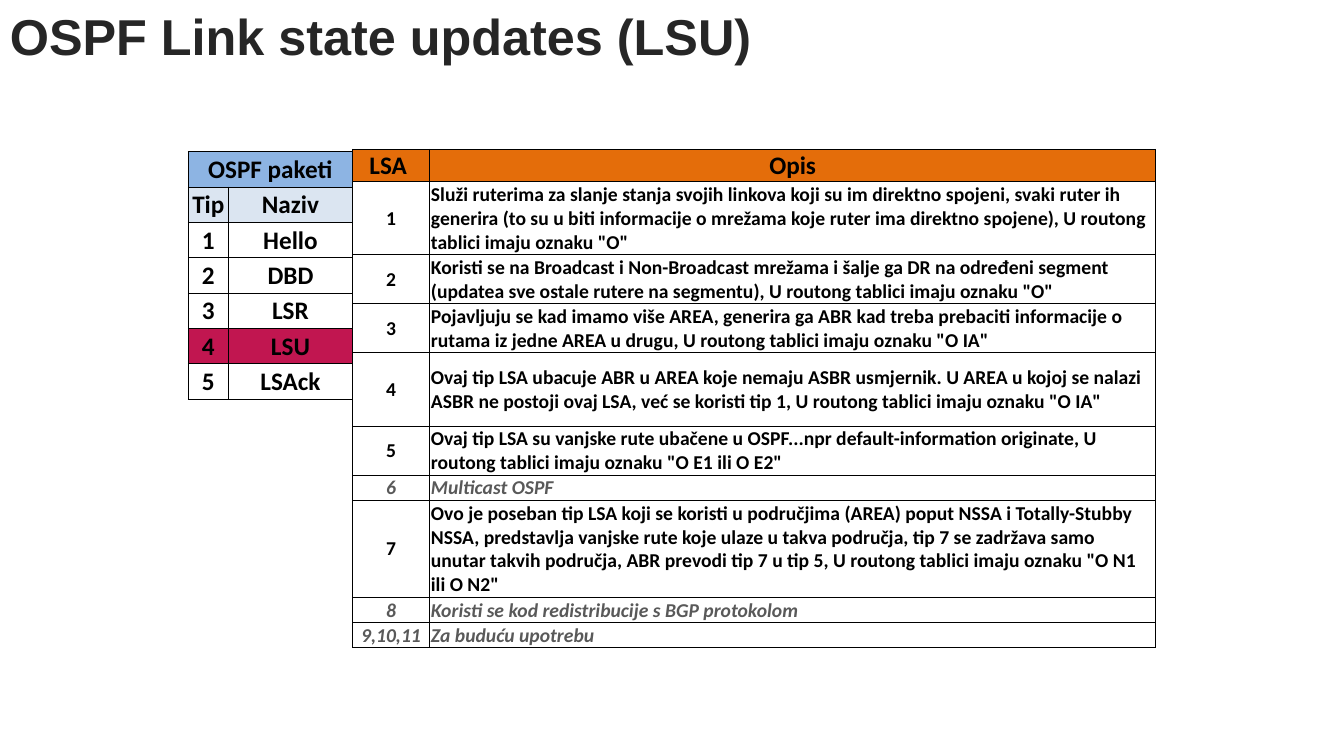
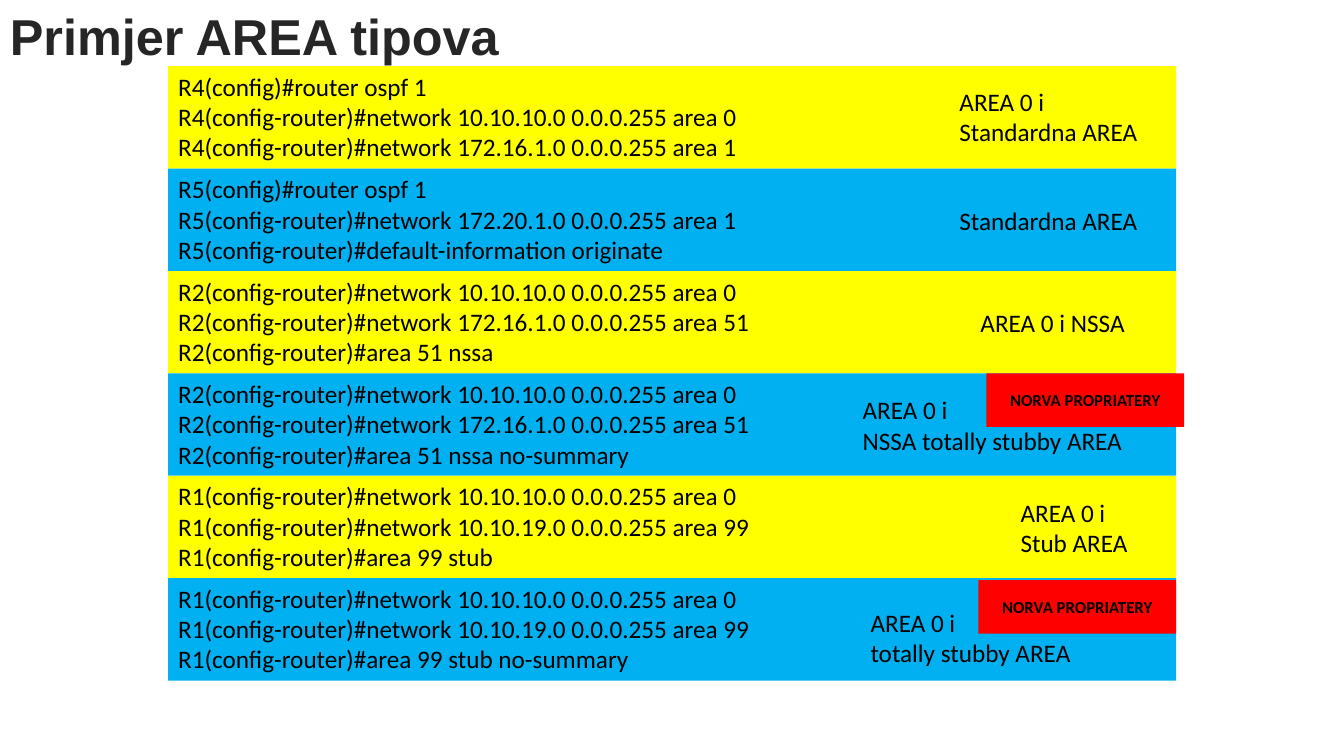
from dataclasses import dataclass

from lxml import etree
from pptx import Presentation
from pptx.dml.color import RGBColor
from pptx.enum.shapes import MSO_SHAPE
from pptx.enum.text import MSO_ANCHOR, PP_ALIGN
from pptx.oxml.ns import qn
from pptx.util import Cm, Pt

RECTANGLE = MSO_SHAPE.RECTANGLE
TOP, MIDDLE = MSO_ANCHOR.TOP, MSO_ANCHOR.MIDDLE
LEFT, CENTER = PP_ALIGN.LEFT, PP_ALIGN.CENTER
BLANK_LAYOUT = 6


@dataclass(frozen=True)
class Theme:
    title_font: str = "Arial"
    body_font: str = "Calibri"
    title_size: float = 36
    body_size: float = 18
    detail_size: float = 14
    badge_size: float = 12
    border_width: float = 0.5
    title: str = "262626"
    ink: str = "000000"
    muted: str = "595959"
    packet_head: str = "8DB4E3"
    packet_subhead: str = "DBE5F1"
    packet_active: str = "C11650"
    lsa_head: str = "E46D0A"
    bands: tuple = ("FFFF00", "00B0F0")
    badge: str = "FF0000"


THEME = Theme()

PACKETS = [("OSPF paketi", ""), ("Tip", "Naziv"), ("1", "Hello"), ("2", "DBD"),
           ("3", "LSR"), ("4", "LSU"), ("5", "LSAck")]
PACKET_FILLS = {0: THEME.packet_head, 1: THEME.packet_subhead, 5: THEME.packet_active}

LSA_ROWS = [
    (0.81, "LSA ", "Opis"),
    (1.84, "1", "Služi ruterima za slanje stanja svojih linkova koji su im direktno "
     "spojeni, svaki ruter ih generira (to su u biti informacije o mrežama koje ruter "
     "ima direktno spojene), U routong tablici imaju oznaku \"O\""),
    (1.24, "2", "Koristi se na Broadcast i Non-Broadcast mrežama i šalje ga DR na "
     "određeni segment (updatea sve ostale rutere na segmentu), U routong tablici "
     "imaju oznaku \"O\""),
    (1.24, "3", "Pojavljuju se kad imamo više AREA, generira ga ABR kad treba prebaciti "
     "informacije o rutama iz jedne AREA u drugu, U routong tablici imaju oznaku \"O IA\""),
    (1.84, "4", "Ovaj tip LSA ubacuje ABR u AREA koje nemaju ASBR usmjernik. U AREA u "
     "kojoj se nalazi ASBR ne postoji ovaj LSA, već se koristi tip 1, U routong tablici "
     "imaju oznaku \"O IA\""),
    (1.24, "5", "Ovaj tip LSA su vanjske rute ubačene u OSPF...npr default-information "
     "originate, U routong tablici imaju oznaku \"O E1 ili O E2\""),
    (0.63, "6", "Multicast OSPF"),
    (2.45, "7", "Ovo je poseban tip LSA koji se koristi u područjima (AREA) poput NSSA i "
     "Totally-Stubby NSSA, predstavlja vanjske rute koje ulaze u takva područja, tip 7 se "
     "zadržava samo unutar takvih područja, ABR prevodi tip 7 u tip 5, U routong tablici "
     "imaju oznaku \"O N1 ili O N2\""),
    (0.63, "8", "Koristi se kod redistribucije s BGP protokolom"),
    (0.63, "9,10,11", "Za buduću upotrebu"),
]
MUTED_TYPES = ("6", "8", "9,10,11")

BACKBONE = "R2(config-router)#network 10.10.10.0 0.0.0.255 area 0"
NSSA_NETWORK = "R2(config-router)#network 172.16.1.0 0.0.0.255 area 51"
STUB_BACKBONE = "R1(config-router)#network 10.10.10.0 0.0.0.255 area 0"
STUB_NETWORK = "R1(config-router)#network 10.10.19.0 0.0.0.255 area 99"
BADGE_TEXT = "NORVA PROPRIATERY"

AREAS = [
    (["R4(config)#router ospf 1",
      "R4(config-router)#network 10.10.10.0 0.0.0.255 area 0",
      "R4(config-router)#network 172.16.1.0 0.0.0.255 area 1"],
     ["AREA 0 i", "Standardna AREA"], (19.69, 0.38), None),
    (["R5(config)#router ospf 1",
      "R5(config-router)#network 172.20.1.0 0.0.0.255 area 1",
      "R5(config-router)#default-information originate"],
     ["Standardna AREA"], (19.69, 0.79), None),
    ([BACKBONE, NSSA_NETWORK, "R2(config-router)#area 51 nssa"],
     ["AREA 0 i NSSA"], (20.22, 0.79), None),
    ([BACKBONE, NSSA_NETWORK, "R2(config-router)#area 51 nssa no-summary"],
     ["AREA 0 i", "NSSA totally stubby AREA"], (17.25, 0.41), (20.62, 0)),
    ([STUB_BACKBONE, STUB_NETWORK, "R1(config-router)#area 99 stub"],
     ["AREA 0 i", "Stub AREA"], (21.23, 0.41), None),
    ([STUB_BACKBONE, STUB_NETWORK, "R1(config-router)#area 99 stub no-summary"],
     ["AREA 0 i", "totally stubby AREA"], (17.45, 0.61), (20.42, 0.05)),
]


def add_span(para, text, size, color=THEME.ink, font=THEME.body_font,
             bold=False, italic=False):
    span = para.add_run()
    span.text = text
    span.font.name = font
    span.font.size = Pt(size)
    span.font.bold = bold
    span.font.italic = italic
    span.font.color.rgb = RGBColor.from_string(color)


def write_lines(frame, lines, size=THEME.body_size, align=LEFT, anchor=TOP, **style):
    frame.word_wrap = True
    frame.vertical_anchor = anchor
    for index, line in enumerate(lines):
        para = frame.add_paragraph() if index else frame.paragraphs[0]
        para.alignment = align
        add_span(para, line, size, **style)


def add_text(page, box, lines, **style):
    shape = page.shapes.add_textbox(*map(Cm, box))
    write_lines(shape.text_frame, lines, **style)
    return shape


def add_panel(page, box, fill, lines, **style):
    shape = page.shapes.add_shape(RECTANGLE, *map(Cm, box))
    shape.shadow.inherit = False
    shape.fill.solid()
    shape.fill.fore_color.rgb = RGBColor.from_string(fill)
    shape.line.fill.background()
    write_lines(shape.text_frame, lines, **style)


def add_page(deck, title):
    page = deck.slides.add_slide(deck.slide_layouts[BLANK_LAYOUT])
    shape = add_text(page, (0, 0, 24, 2), [title], size=THEME.title_size, anchor=MIDDLE,
                     color=THEME.title, font=THEME.title_font, bold=True)
    shape.text_frame.paragraphs[0].line_spacing = 0.9
    return page


def add_borders(cell):
    properties = cell._tc.get_or_add_tcPr()
    for side in ("a:lnL", "a:lnR", "a:lnT", "a:lnB"):
        line = etree.SubElement(properties, qn(side), w=str(Pt(THEME.border_width)))
        fill = etree.SubElement(line, qn("a:solidFill"))
        etree.SubElement(fill, qn("a:srgbClr"), val=THEME.ink)


def add_grid(page, corner, widths, heights):
    box = (*corner, sum(widths), sum(heights))
    table = page.shapes.add_table(len(heights), len(widths), *map(Cm, box)).table
    table.first_row = table.horz_banding = False
    for column, width in zip(table.columns, widths):
        column.width = Cm(width)
    for row, height in zip(table.rows, heights):
        row.height = Cm(height)
    return table


def fill_cell(cell, text, fill=None, **style):
    cell.margin_left = cell.margin_right = cell.margin_top = Cm(0.03)
    cell.margin_bottom = 0
    cell.vertical_anchor = MIDDLE
    add_borders(cell)
    if fill:
        cell.fill.solid()
        cell.fill.fore_color.rgb = RGBColor.from_string(fill)
    else:
        cell.fill.background()
    para = cell.text_frame.paragraphs[0]
    para.alignment = style.pop("align", CENTER)
    if text:
        add_span(para, text, bold=True, **style)


def add_packet_table(page, corner):
    table = add_grid(page, corner, (1.02, 3.12), [0.89] * len(PACKETS))
    for row, packet in enumerate(PACKETS):
        for column, text in enumerate(packet):
            fill_cell(table.cell(row, column), text, PACKET_FILLS.get(row),
                      size=THEME.body_size)
    table.cell(0, 0).merge(table.cell(0, 1))


def add_lsa_table(page, corner):
    table = add_grid(page, corner, (1.95, 18.29), [height for height, *_ in LSA_ROWS])
    for row, (_, kind, description) in enumerate(LSA_ROWS):
        header = row == 0
        muted = kind in MUTED_TYPES
        style = dict(fill=THEME.lsa_head if header else None,
                     size=THEME.body_size if header else THEME.detail_size,
                     color=THEME.muted if muted else THEME.ink, italic=muted)
        fill_cell(table.cell(row, 0), kind, **style)
        fill_cell(table.cell(row, 1), description,
                  align=CENTER if header else LEFT, **style)


def add_area_band(page, box, fill, area):
    left, top, width, _ = box
    commands, label, (label_x, label_y), badge = area
    add_panel(page, box, fill, commands)
    add_text(page, (left + label_x, top + label_y, width - label_x, 1.8 if label[1:] else 1.02),
             label)
    if badge:
        add_panel(page, (left + badge[0], top + badge[1], 4.98, 1.35), THEME.badge,
                  [BADGE_TEXT], size=THEME.badge_size, align=CENTER, anchor=MIDDLE, bold=True)


def add_area_bands(page, box):
    left, top, width, height = box
    pitch = height / len(AREAS)
    for index, area in enumerate(AREAS):
        fill = THEME.bands[index % len(THEME.bands)]
        add_area_band(page, (left, top + index * pitch, width, pitch), fill, area)


def main():
    deck = Presentation()
    deck.slide_width, deck.slide_height = Cm(33.87), Cm(19.05)
    updates = add_page(deck, "OSPF Link state updates (LSU)")
    add_packet_table(updates, (4.74, 3.82))
    add_lsa_table(updates, (8.88, 3.76))
    areas = add_page(deck, "Primjer AREA tipova")
    add_area_bands(areas, (4.24, 1.67, 25.4, 15.48))
    deck.save("out.pptx")


if __name__ == "__main__":
    main()
